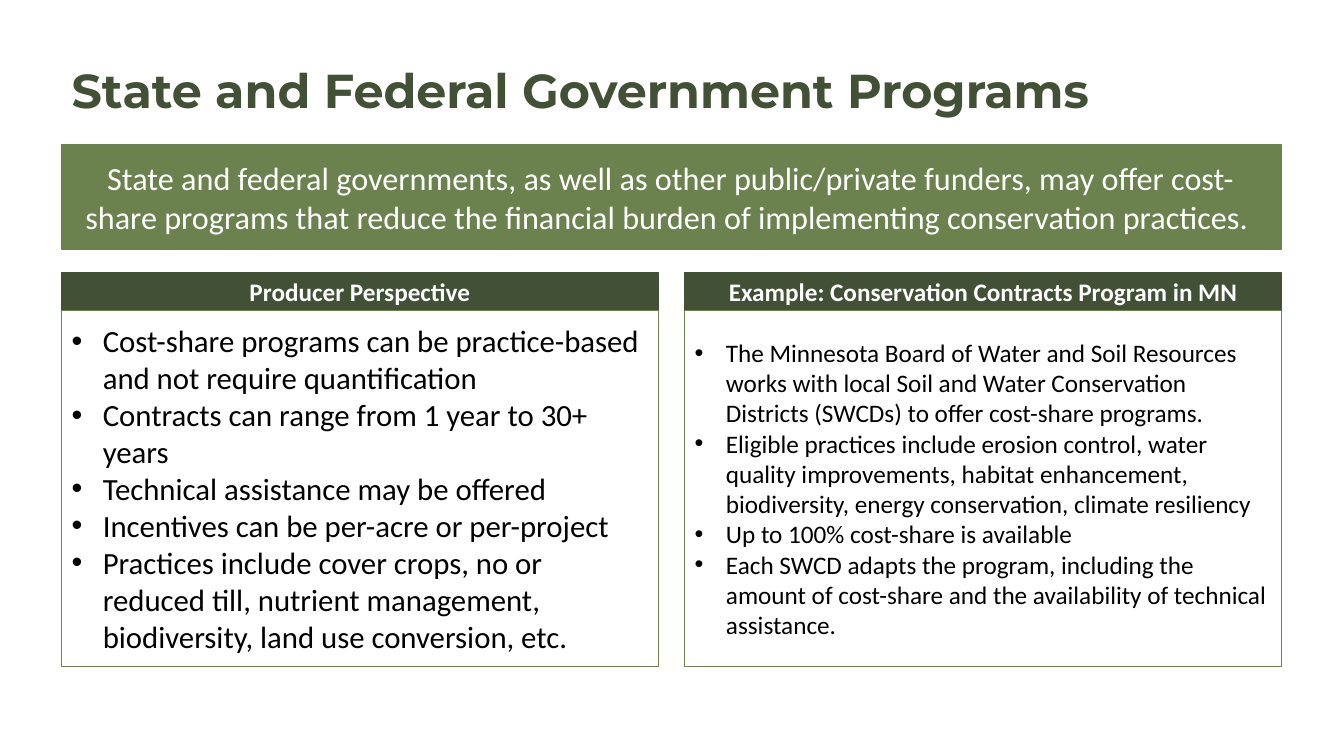
from pptx import Presentation
from pptx.dml.color import RGBColor
from pptx.enum import shapes, text
from pptx.util import Inches, Pt

DARK, GREEN, WHITE, BLACK = "425035", "6B814E", "FFFFFF", "000000"

TITLE = "State and Federal Government Programs"
BANNER = ("State and federal governments, as well as other public/private funders, may offer "
          "cost-share programs that reduce the financial burden of implementing "
          "conservation practices. ")
# heading, bullet size in points, bullets
COLUMNS = [
    ("Producer Perspective", 22, [
        "Cost-share programs can be practice-based and not require quantification",
        "Contracts can range from 1 year to 30+ years",
        "Technical assistance may be offered",
        "Incentives can be per-acre or per-project",
        "Practices include cover crops, no or reduced till, nutrient management, "
        "biodiversity, land use conversion, etc.",
    ]),
    ("Example: Conservation Contracts Program in MN", 18, [
        "The Minnesota Board of Water and Soil Resources works with local Soil and Water "
        "Conservation Districts (SWCDs) to offer cost-share programs.",
        "Eligible practices include erosion control, water quality improvements, habitat "
        "enhancement, biodiversity, energy conservation, climate resiliency",
        "Up to 100% cost-share is available",
        "Each SWCD adapts the program, including the amount of cost-share and the "
        "availability of technical assistance.",
    ]),
]

LEFT, COLUMN_WIDTH, GAP = 0.61, 5.92, 0.26
FULL_WIDTH = 2 * COLUMN_WIDTH + GAP
TITLE_TOP, TITLE_HEIGHT = 0.4, 1.04
BANNER_TOP, BANNER_HEIGHT = TITLE_TOP + TITLE_HEIGHT, 1.03
HEADING_TOP, HEADING_HEIGHT = 2.71, 0.37
LIST_TOP, LIST_HEIGHT = HEADING_TOP + HEADING_HEIGHT, 3.53
INDENT = Inches(0.31)


def color(hex_string):
    return RGBColor.from_string(hex_string)


def place(shape, left, top, width, height):
    shape.left, shape.top = Inches(left), Inches(top)
    shape.width, shape.height = Inches(width), Inches(height)


def paint(shape, fill, line):
    shape.fill.solid()
    shape.fill.fore_color.rgb = color(fill)
    shape.line.color.rgb = color(line)
    shape.line.width = Pt(1)


def write(shape, lines, size, ink, font="Calibri", bold=False, align="LEFT",
          spacing=1.0, bulleted=False):
    frame = shape.text_frame
    frame.text = "\n".join(lines)
    frame.word_wrap = True
    frame.auto_size = text.MSO_AUTO_SIZE.NONE
    frame.vertical_anchor = text.MSO_ANCHOR.MIDDLE
    for paragraph in frame.paragraphs:
        if bulleted:
            properties = paragraph._p.get_or_add_pPr()
            properties.set("marL", str(INDENT))
            properties.set("indent", str(-INDENT))
        paragraph.alignment = text.PP_ALIGN[align]
        paragraph.line_spacing = spacing
        paragraph.space_before = Pt(0)
        for run in paragraph.runs:
            run.font.name = font
            run.font.size = Pt(size)
            run.font.bold = bold
            run.font.color.rgb = color(ink)


presentation = Presentation()
presentation.slide_width, presentation.slide_height = Inches(13.33), Inches(7.5)
comparison_layout = presentation.slide_layouts.get_by_name("Comparison")
slide = presentation.slides.add_slide(comparison_layout)
title, *column_parts = slide.placeholders

place(title, LEFT, TITLE_TOP, 11.4, TITLE_HEIGHT)
write(title, [TITLE], 34, DARK, font="Montserrat", bold=True, spacing=0.9)

banner = slide.shapes.add_shape(shapes.MSO_SHAPE.RECTANGLE, 0, 0, 0, 0)
banner.shadow.inherit = False
place(banner, LEFT, BANNER_TOP, FULL_WIDTH, BANNER_HEIGHT)
paint(banner, GREEN, GREEN)
write(banner, [BANNER], 23, WHITE, align="CENTER")

for index, (heading_text, size, bullets) in enumerate(COLUMNS):
    heading, bullet_list = column_parts[2 * index:2 * index + 2]
    left = LEFT + index * (COLUMN_WIDTH + GAP)

    place(heading, left, HEADING_TOP, COLUMN_WIDTH, HEADING_HEIGHT)
    paint(heading, DARK, DARK)
    write(heading, [heading_text], 18, WHITE, bold=True, align="CENTER")

    place(bullet_list, left, LIST_TOP, COLUMN_WIDTH, LIST_HEIGHT)
    paint(bullet_list, WHITE, GREEN)
    write(bullet_list, bullets, size, BLACK, bulleted=True)

presentation.save("out.pptx")
